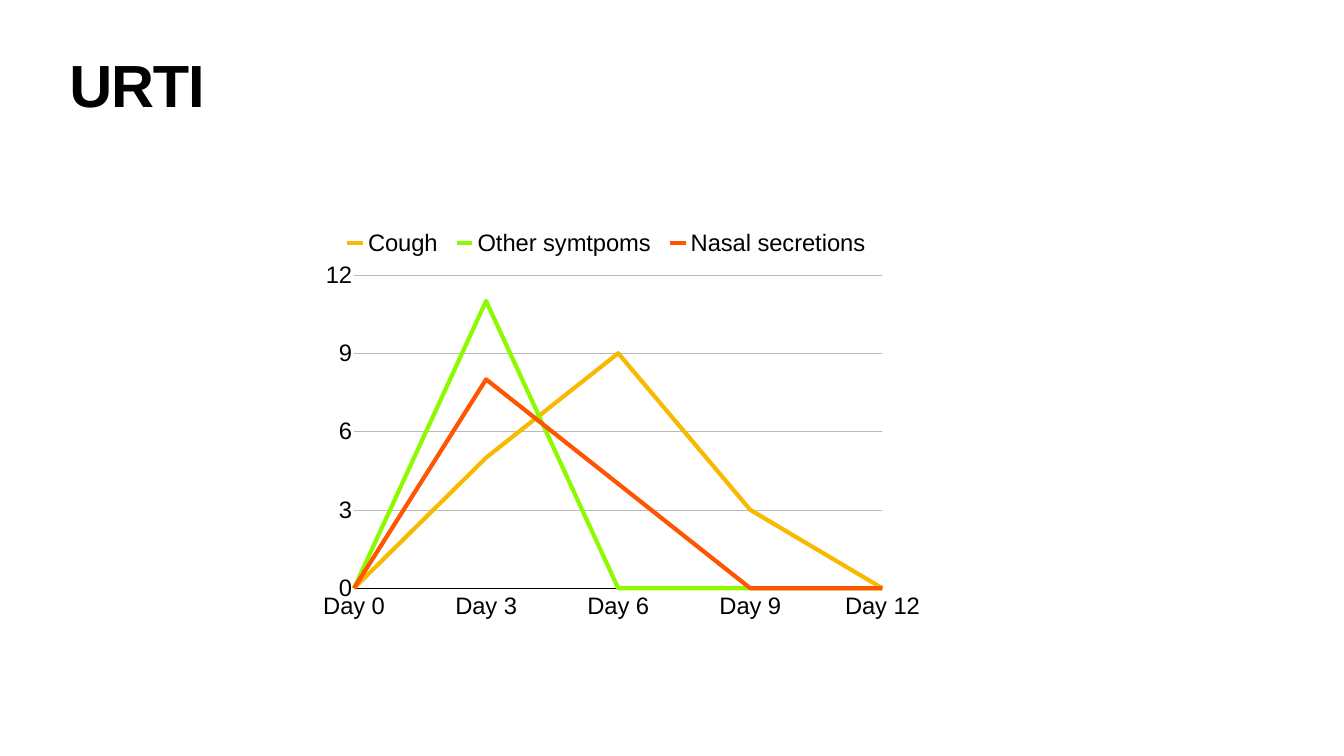
from typing import Any, NamedTuple, Optional

from pptx import Presentation
from pptx.chart.data import CategoryChartData
from pptx.dml.color import RGBColor
from pptx.enum.chart import XL_CHART_TYPE as ChartType
from pptx.enum.chart import XL_LEGEND_POSITION as LegendPosition
from pptx.enum.chart import XL_MARKER_STYLE as MarkerStyle
from pptx.enum.chart import XL_TICK_LABEL_POSITION as LabelPosition
from pptx.enum.chart import XL_TICK_MARK as TickMark
from pptx.enum.text import MSO_ANCHOR as Anchor
from pptx.oxml import parse_xml
from pptx.oxml.ns import nsdecls, qn
from pptx.util import Pt

BLACK = RGBColor(0x00, 0x00, 0x00)
GRID_GREY = RGBColor(0xB8, 0xB8, 0xB8)
AMBER = RGBColor(0xF8, 0xBA, 0x00)
GREEN = RGBColor(0x8E, 0xFA, 0x00)
ORANGE = RGBColor(0xFF, 0x54, 0x00)
FONT = "Arial"
DAYS = [f"Day {day}" for day in range(0, 13, 3)]


class Symptom(NamedTuple):
    name: str
    values: tuple[int, ...]
    color: RGBColor


class Layout(NamedTuple):
    """Place inside the chart, as fractions of its size."""
    x: float
    y: float
    w: float
    h: float


SYMPTOMS = [
    Symptom("Cough", (0, 5, 9, 3, 0), AMBER),
    Symptom("Other symtpoms", (0, 11, 0, 0, 0), GREEN),
    Symptom("Nasal secretions", (0, 8, 4, 0, 0), ORANGE),
]
PLOT_LAYOUT = Layout(0.07, 0.15, 0.87, 0.74)
LEGEND_LAYOUT = Layout(0.04, 0.02, 0.89, 0.11)


def set_format(target: Any, values: dict[str, Any]) -> None:
    for name, value in values.items():
        setattr(target, name, value)


def style_font(font: Any, size: float, bold: bool = False) -> None:
    set_format(font, {"name": FONT, "size": Pt(size), "bold": bold})
    font.color.rgb = BLACK


def style_line(line: Any, color: RGBColor, width: float) -> None:
    line.color.rgb = color
    line.width = Pt(width)


def place(element: Any, layout: Layout, index: int, target: Optional[str] = None) -> None:
    """Give a chart part a manual layout as its child at the index."""
    for old in element.findall(qn("c:layout")):
        element.remove(old)
    inner = f'<c:layoutTarget val="{target}"/>' if target else ""
    modes = "".join(f'<c:{side}Mode val="edge"/>' for side in "xy")
    sizes = "".join(f'<c:{name} val="{value}"/>' for name, value in layout._asdict().items())
    element.insert(index, parse_xml(
        f'<c:layout {nsdecls("c")}><c:manualLayout>{inner}{modes}{sizes}'
        "</c:manualLayout></c:layout>"))


def add_title(slide: Any, text: str) -> None:
    frame = slide.shapes.add_textbox(Pt(95), Pt(85), Pt(1730), Pt(113)).text_frame
    margins = {f"margin_{side}": Pt(4) for side in ("left", "top", "right", "bottom")}
    set_format(frame, {"word_wrap": True, "vertical_anchor": Anchor.TOP, **margins})
    paragraph = frame.paragraphs[0]
    paragraph.line_spacing = 0.8
    run = paragraph.add_run()
    run.text = text
    style_font(run.font, 85, bold=True)
    run.font._element.set("spc", "-170")


def start_lines_on_axis(value_axis: Any) -> None:
    """Let the first and last category sit on the edges of the plot."""
    element = value_axis._element
    for old in element.findall(qn("c:crossBetween")):
        element.remove(old)
    element.find(qn("c:crosses")).addnext(
        parse_xml(f'<c:crossBetween {nsdecls("c")} val="midCat"/>'))


def style_axes(chart: Any) -> None:
    category_axis, value_axis = chart.category_axis, chart.value_axis
    for axis in (category_axis, value_axis):
        set_format(axis, {"major_tick_mark": TickMark.NONE, "minor_tick_mark": TickMark.NONE})
        style_font(axis.tick_labels.font, 34)
    category_axis.tick_label_position = LabelPosition.LOW
    style_line(category_axis.format.line, BLACK, 1)
    set_format(value_axis, {"minimum_scale": 0, "maximum_scale": 12, "major_unit": 3,
                            "has_major_gridlines": True})
    value_axis.format.line.fill.background()
    style_line(value_axis.major_gridlines.format.line, GRID_GREY, 1)
    start_lines_on_axis(value_axis)


def add_symptom_chart(slide: Any) -> None:
    data = CategoryChartData()
    data.categories = DAYS
    for symptom in SYMPTOMS:
        data.add_series(symptom.name, symptom.values)
    chart = slide.shapes.add_chart(
        ChartType.LINE, Pt(445), Pt(302), Pt(869), Pt(605), data).chart
    set_format(chart, {"has_title": False, "has_legend": True})
    style_font(chart.font, 34)
    style_axes(chart)
    for series, symptom in zip(chart.plots[0].series, SYMPTOMS):
        series.smooth = False
        series.marker.style = MarkerStyle.NONE
        style_line(series.format.line, symptom.color, 6)
    legend = chart.legend
    set_format(legend, {"position": LegendPosition.TOP, "include_in_layout": True})
    style_font(legend.font, 34)
    place(legend._element, LEGEND_LAYOUT, 1)
    place(chart._chartSpace.chart.plotArea, PLOT_LAYOUT, 0, "inner")


def main() -> None:
    presentation = Presentation()
    set_format(presentation, {"slide_width": Pt(1920), "slide_height": Pt(1080)})
    slide = presentation.slides.add_slide(presentation.slide_layouts[6])
    add_title(slide, "URTI")
    add_symptom_chart(slide)
    presentation.save("out.pptx")


if __name__ == "__main__":
    main()
